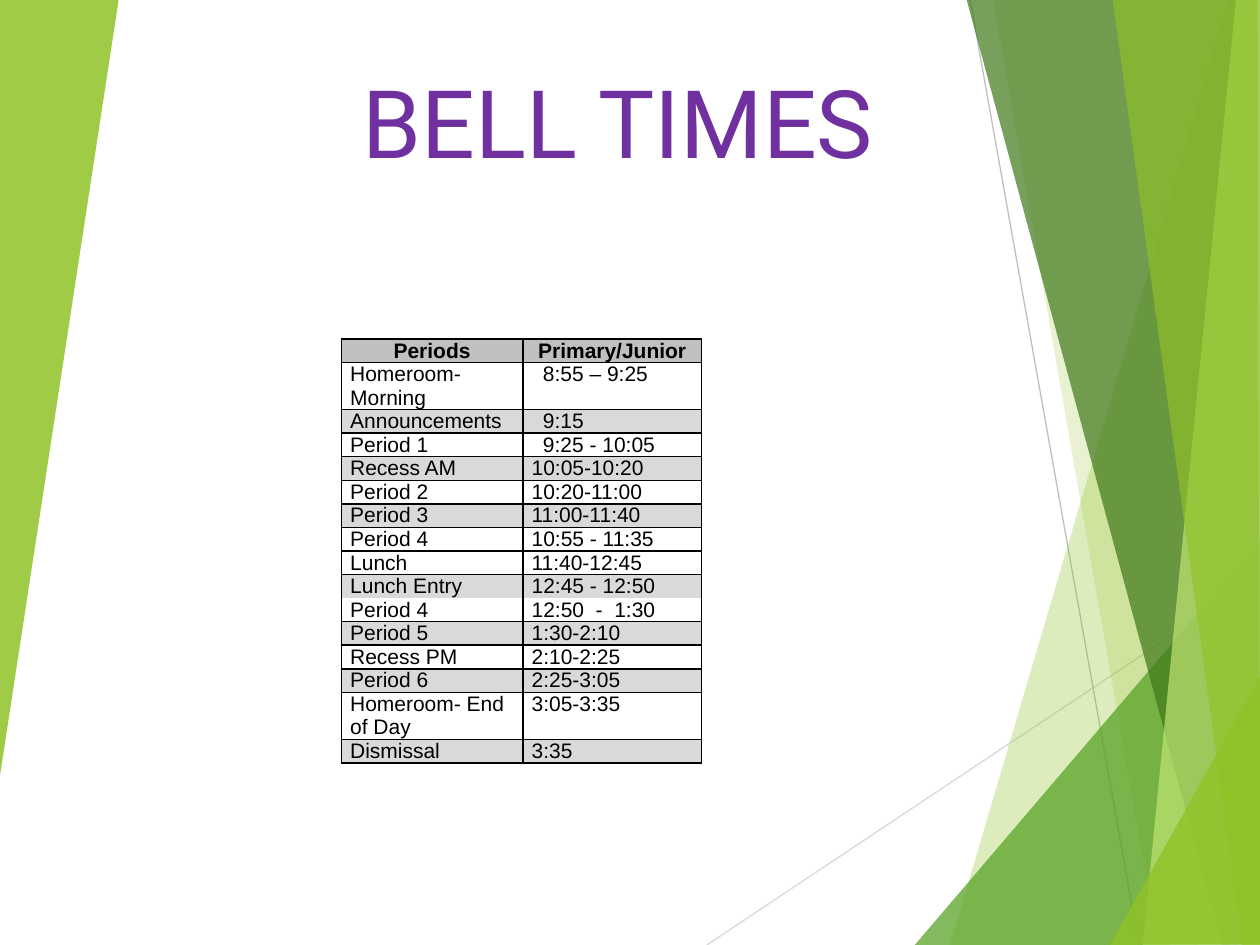
import pptx
import pptx.dml.color
import pptx.enum.shapes
import pptx.enum.text
import pptx.oxml.ns
import pptx.util
from lxml import etree

Inches = pptx.util.Inches
Pt = pptx.util.Pt
Align = pptx.enum.text.PP_ALIGN

THEME = {
    "title": {"font": "Roboto", "size": 54, "color": "7030A0"},
    "table": {"font": "Arial", "size": 12, "color": "000000"},
    "header": "C0C0C0", "shade": "D9D9D9", "border": "000000",
    "lime": "90C226", "green": "54A021", "forest": "3F7819", "pale": "C0E474",
    "border_width": 1, "ray_width": 0.75,
}

TITLE = "BELL TIMES"
HEADINGS = ("Periods", "Primary/Junior")
# period, time, shaded, time indented
BELLS = [
    ("Homeroom-Morning", "8:55 – 9:25", False, True),
    ("Announcements", "9:15", True, True),
    ("Period 1", "9:25 - 10:05", False, True),
    ("Recess AM", "10:05-10:20", True, False),
    ("Period 2", "10:20-11:00", False, False),
    ("Period 3", "11:00-11:40", True, False),
    ("Period 4", "10:55 - 11:35", False, False),
    ("Lunch", "11:40-12:45", False, False),
    ("Lunch Entry", "12:45 - 12:50", True, False),
    ("Period 4", "12:50  -  1:30", False, False),
    ("Period 5", "1:30-2:10", True, False),
    ("Recess PM", "2:10-2:25", False, False),
    ("Period 6", "2:25-3:05", True, False),
    ("Homeroom- End of Day", "3:05-3:35", False, False),
    ("Dismissal", "3:35", True, False),
]
JOINED_ROWS = (9, 10)
COLUMN_WIDTHS = (1.44, 1.42)
ROW_HEIGHT = 0.18

RAYS = [((5.61, 7.5), (10.01, 4.57), "D9D9D9"), ((7.7, 0), (9.04, 7.5), "BFBFBF")]
FACETS = [
    ("lime", 30, [(9.75, 0), (7.54, 7.5), (10.02, 7.51), (10.01, 0.01)]),
    ("lime", 20, [(7.88, -0.01), (9.19, 7.5), (10.01, 7.5), (10.01, -0.01)]),
    ("green", 72, [(7.26, 7.5), (10, 4.29), (10.01, 7.5)]),
    ("forest", 70, [(7.67, -0.01), (9.7, 7.5), (10.01, 7.49), (10.01, -0.01)]),
    ("pale", 70, [(9.81, -0.01), (9.07, 7.5), (10.01, 7.5), (10, -0.01)]),
    ("lime", 65, [(8.83, -0.01), (9.86, 7.5), (10, 7.5), (9.98, -0.01)]),
    ("lime", 80, [(8.81, 7.5), (10.01, 5.35), (10.01, 7.49)]),
    ("lime", 85, [(-0.01, 0), (0.94, -0.01), (0.94, 0.01), (-0.01, 6.22)]),
]


def rgb(color):
    return pptx.dml.color.RGBColor.from_string(color)


def add_xml(parent, tag, **attributes):
    return etree.SubElement(parent, pptx.oxml.ns.qn(tag), attributes)


def style_text(paragraph, style, bold=False):
    for run in paragraph.runs:
        run.font.name = style["font"]
        run.font.size = Pt(style["size"])
        run.font.color.rgb = rgb(style["color"])
        run.font.bold = bold


def add_ray(shapes, start, end, color):
    ray = shapes.add_connector(pptx.enum.shapes.MSO_CONNECTOR.STRAIGHT,
                               *map(Inches, start + end))
    ray.line.color.rgb = rgb(color)
    ray.line.width = Pt(THEME["ray_width"])
    add_xml(ray._element.spPr, "a:effectLst")


def add_facet(shapes, color, opacity, corners):
    points = [(Inches(x), Inches(y)) for x, y in corners]
    builder = shapes.build_freeform(*points[0])
    builder.add_line_segments(points[1:], close=True)
    facet = builder.convert_to_shape()
    facet.shadow.inherit = False
    facet.line.fill.background()
    facet.fill.solid()
    facet.fill.fore_color.rgb = rgb(THEME[color])
    swatch = facet._element.spPr.find(".//" + pptx.oxml.ns.qn("a:srgbClr"))
    add_xml(swatch, "a:alpha", val=str(opacity * 1000))


def set_borders(cell, hidden_side):
    properties = cell._tc.get_or_add_tcPr()
    for side in "LRTB":
        border = add_xml(properties, "a:ln" + side, w=str(Pt(THEME["border_width"])))
        if side == hidden_side:
            add_xml(border, "a:noFill")
        else:
            add_xml(add_xml(border, "a:solidFill"), "a:srgbClr", val=THEME["border"])


def fill_cell(cell, text, fill, hidden_side=None, heading=False, indent=0):
    cell.margin_left = Inches(0.07 + indent)
    cell.margin_right = Inches(0.07)
    cell.margin_top = cell.margin_bottom = 0
    set_borders(cell, hidden_side)
    if fill:
        cell.fill.solid()
        cell.fill.fore_color.rgb = rgb(fill)
    else:
        cell.fill.background()
    cell.text_frame.text = text
    paragraph = cell.text_frame.paragraphs[0]
    paragraph.alignment = Align.CENTER if heading else Align.LEFT
    style_text(paragraph, THEME["table"], heading)


def add_timetable(shapes):
    row_count = len(BELLS) + 1
    timetable = shapes.add_table(row_count, len(HEADINGS), Inches(2.71), Inches(2.69),
                                 Inches(sum(COLUMN_WIDTHS)),
                                 Inches(ROW_HEIGHT * row_count)).table
    timetable.first_row = timetable.horz_banding = False
    for column, width in zip(timetable.columns, COLUMN_WIDTHS):
        column.width = Inches(width)
    for column, heading in enumerate(HEADINGS):
        fill_cell(timetable.cell(0, column), heading, THEME["header"], heading=True)
    hidden_sides = dict(zip(JOINED_ROWS, "BT"))
    for row, (period, time, shaded, indented) in enumerate(BELLS, 1):
        fill = THEME["shade"] if shaded else None
        hidden = hidden_sides.get(row)
        fill_cell(timetable.cell(row, 0), period, fill, hidden)
        fill_cell(timetable.cell(row, 1), time, fill, hidden, indent=0.09 if indented else 0)


def set_title(title):
    title.left, title.top, title.width, title.height = map(Inches, (0.67, 0.36, 6.54, 1.1))
    frame = title.text_frame
    frame.text = TITLE
    frame.vertical_anchor = pptx.enum.text.MSO_ANCHOR.BOTTOM
    frame.margin_right = Inches(0.28)
    frame.paragraphs[0].alignment = Align.RIGHT
    style_text(frame.paragraphs[0], THEME["title"])


def main():
    deck = pptx.Presentation()
    deck.slide_width, deck.slide_height = Inches(10), Inches(7.5)
    slide = deck.slides.add_slide(deck.slide_layouts[0])
    subtitle = slide.placeholders[1]._element
    subtitle.getparent().remove(subtitle)
    for ray in RAYS:
        add_ray(slide.shapes, *ray)
    for facet in FACETS:
        add_facet(slide.shapes, *facet)
    set_title(slide.shapes.title)
    add_timetable(slide.shapes)
    deck.save("out.pptx")


if __name__ == "__main__":
    main()
